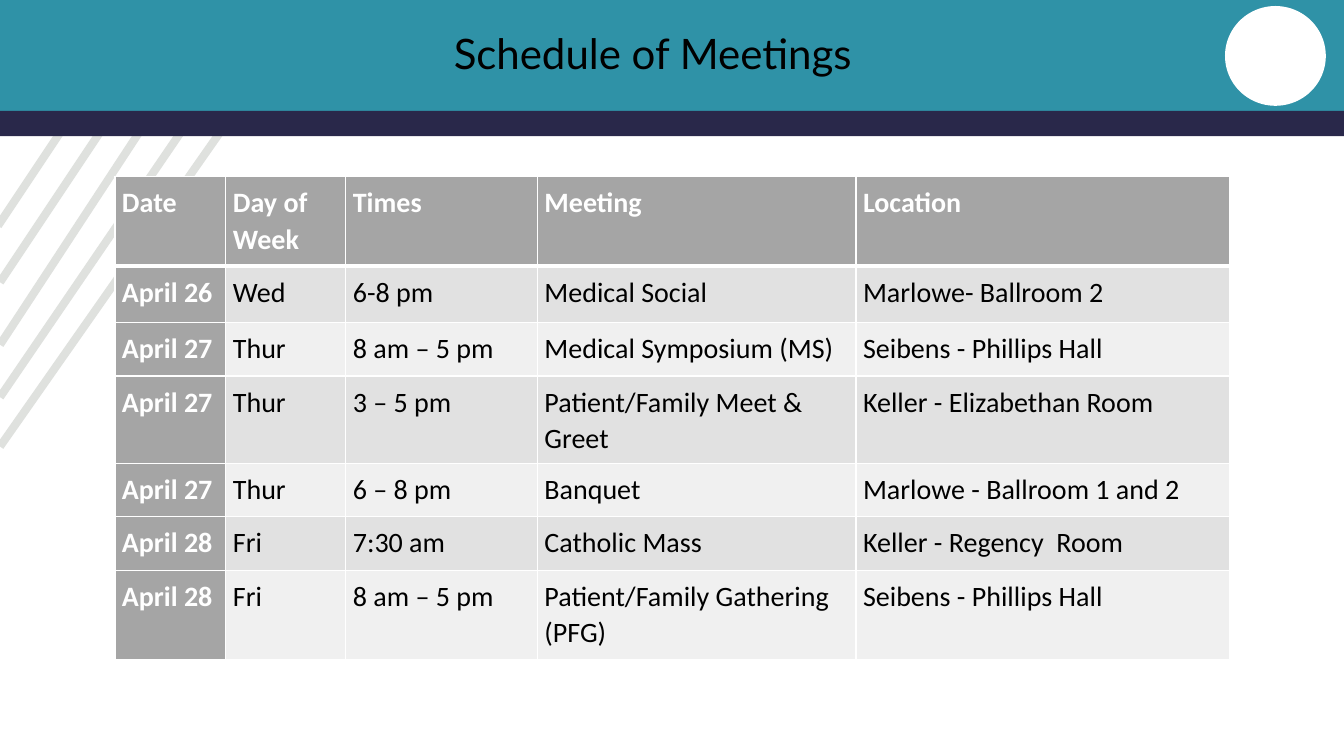
from dataclasses import dataclass

from lxml.etree import SubElement
from pptx import Presentation
from pptx.dml.color import RGBColor
from pptx.enum.shapes import MSO_CONNECTOR, MSO_SHAPE
from pptx.enum.text import MSO_ANCHOR, PP_ALIGN
from pptx.oxml.ns import qn
from pptx.util import Inches, Pt

# Content
TITLE = "Schedule of Meetings"
MEETINGS = [
    ("Date", "Day of Week", "Times", "Meeting", "Location"),
    ("April 26", "Wed", "6-8 pm", "Medical Social", "Marlowe- Ballroom 2"),
    ("April 27", "Thur", "8 am – 5 pm", "Medical Symposium (MS)", "Seibens - Phillips Hall"),
    ("April 27", "Thur", "3 – 5 pm", "Patient/Family Meet & Greet", "Keller - Elizabethan Room"),
    ("April 27", "Thur", "6 – 8 pm", "Banquet", "Marlowe - Ballroom 1 and 2"),
    ("April 28", "Fri", "7:30 am", "Catholic Mass", "Keller - Regency  Room"),
    ("April 28", "Fri", "8 am – 5 pm", "Patient/Family Gathering (PFG)", "Seibens - Phillips Hall"),
]

# Layout in inches
WIDTH, HEIGHT = 13.33, 7.5
COLUMN_WIDTHS = [1.1, 1.19, 1.9, 3.16, 3.71]
ROW_HEIGHTS = [0.89, 0.56, 0.53, 0.53, 0.53, 0.53, 0.89]
TABLE_LEFT, TABLE_TOP = 1.14, 1.75
CELL_MARGIN = 0.07
STRIPES = [
    (1.34, 0.2, -0.02, 2.24),
    (2.57, 0.76, 0, 4.43),
    (1.36, 0.76, 0, 2.8),
    (2.17, 0.76, 0, 3.94),
    (2.07, 0.26, 0, 3.42),
]


@dataclass(frozen=True)
class Theme:
    teal: str = "2F92A7"
    navy: str = "29284A"
    white: str = "FFFFFF"
    black: str = "000000"
    stripe: str = "DFE1DE"
    heading: str = "A5A5A5"
    bands: tuple = ("F0F0F0", "E1E1E1")
    title_font: str = "Lato"
    table_font: str = "Calibri"
    title_size: int = 30
    table_size: int = 20
    stripe_width: float = 5.75


THEME = Theme()


def add_stripe(page, start_x, start_y, end_x, end_y):
    stripe = page.shapes.add_connector(
        MSO_CONNECTOR.STRAIGHT,
        Inches(start_x), Inches(start_y), Inches(end_x), Inches(end_y))
    stripe.line.color.rgb = RGBColor.from_string(THEME.stripe)
    stripe.line.width = Pt(THEME.stripe_width)
    SubElement(stripe._element.spPr, qn("a:effectLst"))


def add_plain_shape(page, kind, left, top, width, height, color):
    shape = page.shapes.add_shape(
        kind, Inches(left), Inches(top), Inches(width), Inches(height))
    shape.shadow.inherit = False
    shape.fill.solid()
    shape.fill.fore_color.rgb = RGBColor.from_string(color)
    shape.line.fill.background()


def style_font(font, name, size, color, bold=False):
    font.name = name
    font.size = Pt(size)
    font.bold = bold
    font.color.rgb = RGBColor.from_string(color)


def set_borders(cell, widths):
    """Draw white borders; widths maps each side to points."""
    properties = cell._tc.get_or_add_tcPr()
    for index, (side, width) in enumerate(widths.items()):
        border = properties.makeelement(qn(f"a:ln{side}"), {"w": str(Pt(width))})
        fill = SubElement(border, qn("a:solidFill"))
        SubElement(fill, qn("a:srgbClr"), val=THEME.white)
        properties.insert(index, border)


def fill_cell(cell, text, row, column):
    heading = row == 0 or column == 0
    color = THEME.heading if heading else THEME.bands[row % 2]
    cell.fill.solid()
    cell.fill.fore_color.rgb = RGBColor.from_string(color)
    cell.margin_left = cell.margin_right = Inches(CELL_MARGIN)
    cell.margin_top = cell.margin_bottom = Inches(CELL_MARGIN)
    set_borders(cell, {"L": 1, "R": 1, "T": 3 if row == 1 else 1, "B": 3 if row == 0 else 1})
    cell.text_frame.text = text
    para = cell.text_frame.paragraphs[0]
    para.line_spacing = 1.07
    style_font(para.runs[0].font, THEME.table_font, THEME.table_size,
               THEME.white if heading else THEME.black, heading)


def add_schedule(page):
    frame = page.shapes.add_table(
        len(MEETINGS), len(COLUMN_WIDTHS), Inches(TABLE_LEFT), Inches(TABLE_TOP),
        Inches(sum(COLUMN_WIDTHS)), Inches(sum(ROW_HEIGHTS)))
    table = frame.table
    table.first_col = True
    for column, width in zip(table.columns, COLUMN_WIDTHS):
        column.width = Inches(width)
    for row, height in zip(table.rows, ROW_HEIGHTS):
        row.height = Inches(height)
    for row, meeting in enumerate(MEETINGS):
        for column, text in enumerate(meeting):
            fill_cell(table.cell(row, column), text, row, column)


def set_title(page):
    title = page.shapes.title
    title.left, title.top = Inches(2.82), Inches(0.29)
    title.width, title.height = Inches(7.31), Inches(0.52)
    title.text_frame.text = TITLE
    title.text_frame.word_wrap = True
    title.text_frame.vertical_anchor = MSO_ANCHOR.MIDDLE
    para = title.text_frame.paragraphs[0]
    para.alignment = PP_ALIGN.CENTER
    para.line_spacing = 0.9
    style_font(para.runs[0].font, THEME.title_font, THEME.title_size, THEME.black)
    # Bring the title in front of the header band
    page.shapes._spTree.append(title._element)


def main():
    deck = Presentation()
    deck.slide_width, deck.slide_height = Inches(WIDTH), Inches(HEIGHT)
    page = deck.slides.add_slide(deck.slide_layouts.get_by_name("Title Only"))

    # Diagonal stripes, then the header on top of them
    for stripe in STRIPES:
        add_stripe(page, *stripe)
    add_plain_shape(page, MSO_SHAPE.RECTANGLE, 0, -0.1, WIDTH, 1.22, THEME.teal)
    add_plain_shape(page, MSO_SHAPE.RECTANGLE, 0, 1.1, WIDTH, 0.25, THEME.navy)
    add_plain_shape(page, MSO_SHAPE.OVAL, 12.15, 0.06, 1, 0.99, THEME.white)

    # Title and schedule
    set_title(page)
    add_schedule(page)
    deck.save("out.pptx")


if __name__ == "__main__":
    main()
